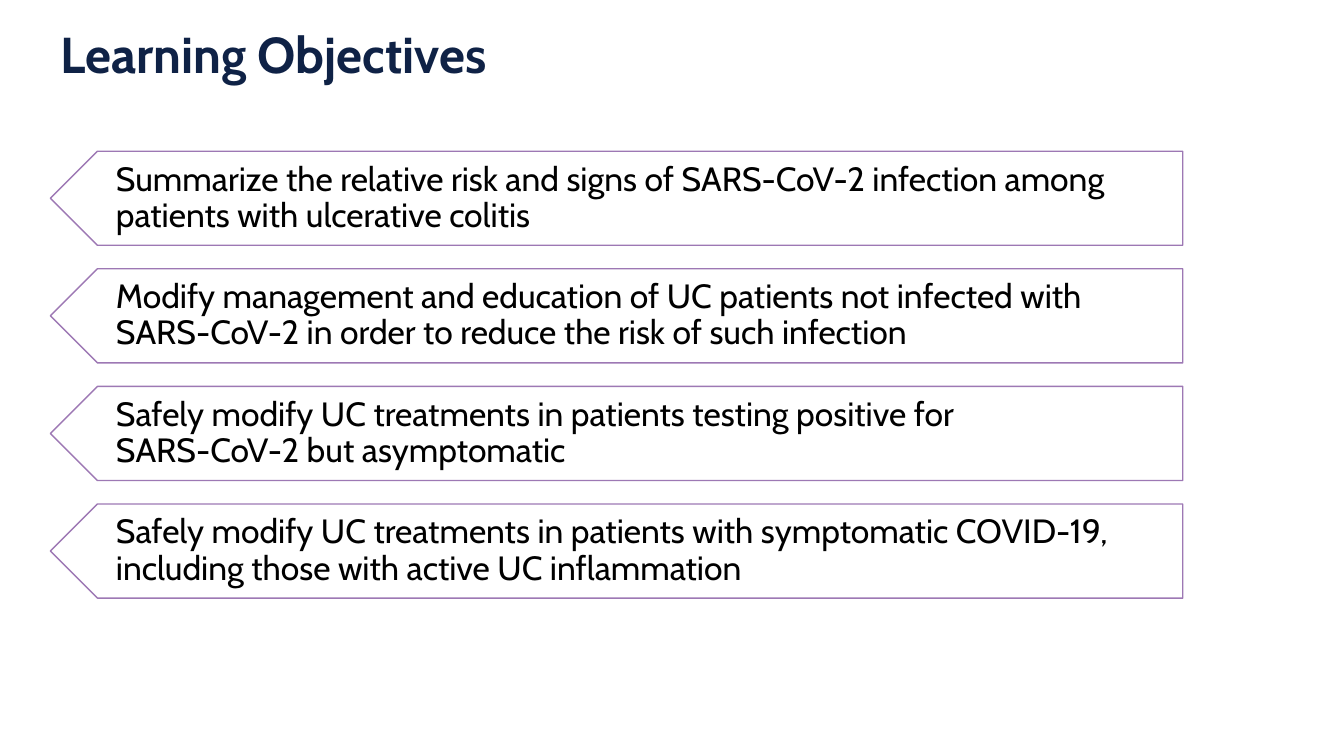
"""Build the learning objectives slide."""
from pptx import Presentation
from pptx import util as u
from pptx.dml import color
from pptx.enum import text

COLUMNS, ROWS = 80, 45
CELL = u.Inches(1) / 6
OBJECTIVES = [
    "Summarize the relative risk and signs of SARS-CoV-2 infection among patients with ulcerative colitis",
    "Modify management and education of UC patients not infected with SARS-CoV-2 in order to reduce the risk of such infection",
    "Safely modify UC treatments in patients testing positive for \vSARS-CoV-2 but asymptomatic",
    "Safely modify UC treatments in patients with symptomatic COVID-19, including those with active UC inflammation",
]


def grid(cells):
    """Return the length of a number of grid cells."""
    return u.Emu(round(cells * CELL))


def rgb(value):
    """Return the colour of a hex string."""
    return color.RGBColor.from_string(value)


def apply(target, values):
    """Set each named attribute of the target."""
    for name, value in values.items():
        setattr(target, name, value)


class Page:
    """Hold the style and the current slide."""

    font = "Cabin"
    navy, purple, white, black = "0F2246", "9D78B4", "FFFFFF", "000000"

    def __init__(self, deck):
        """Add a title-only slide to the deck."""
        self.slide = deck.slides.add_slide(deck.slide_layouts[5])

    def label(self, box, words, size, ink, bold, frame):
        """Fill a shape with one left-aligned paragraph."""
        apply(box.text_frame, {"text": words, "word_wrap": True,
                               "auto_size": text.MSO_AUTO_SIZE.NONE, **frame})
        para = box.text_frame.paragraphs[0]
        apply(para, {"alignment": text.PP_ALIGN.LEFT, "line_spacing": 0.9})
        for span in para.runs:
            apply(span.font, {"name": self.font, "size": u.Pt(size), "bold": bold})
            span.font.color.rgb = rgb(ink)

    def title(self, words, left, top, width, height):
        """Place and format the title placeholder."""
        box = self.slide.shapes.title
        apply(box, {"left": grid(left), "top": grid(top),
                    "width": grid(width), "height": grid(height)})
        self.label(box, words, 36, self.navy, True,
                   {"vertical_anchor": text.MSO_ANCHOR.TOP})

    def banner(self, words, left, top, width, height):
        """Draw a banner with a point on its left side."""
        right, bottom, notch = left + width, top + height, left + height / 2
        corners = [(notch, bottom), (left, top + height / 2), (notch, top), (right, top)]
        outline = self.slide.shapes.build_freeform(grid(right), grid(bottom))
        outline.add_line_segments([(grid(x), grid(y)) for x, y in corners], close=True)
        box = outline.convert_to_shape()
        box.shadow.inherit = False
        box.fill.solid()
        box.fill.fore_color.rgb = rgb(self.white)
        box.line.color.rgb = rgb(self.purple)
        box.line.width = u.Pt(1)
        self.label(box, words, 24, self.black, False, {
            "vertical_anchor": text.MSO_ANCHOR.MIDDLE,
            "margin_left": u.Inches(0.65), "margin_right": u.Inches(0.19),
            "margin_top": u.Inches(0.1), "margin_bottom": u.Inches(0.1)})


def main():
    """Build and save the deck."""
    deck = Presentation()
    apply(deck, {"slide_width": grid(COLUMNS), "slide_height": grid(ROWS)})
    page = Page(deck)
    page.title("Learning Objectives", 3, 1.5, 75, 7.5)
    for index, objective in enumerate(OBJECTIVES):
        page.banner(objective, 3, 9 + 7 * index, 67.4, 5.6)
    deck.save("out.pptx")


if __name__ == "__main__":
    main()
